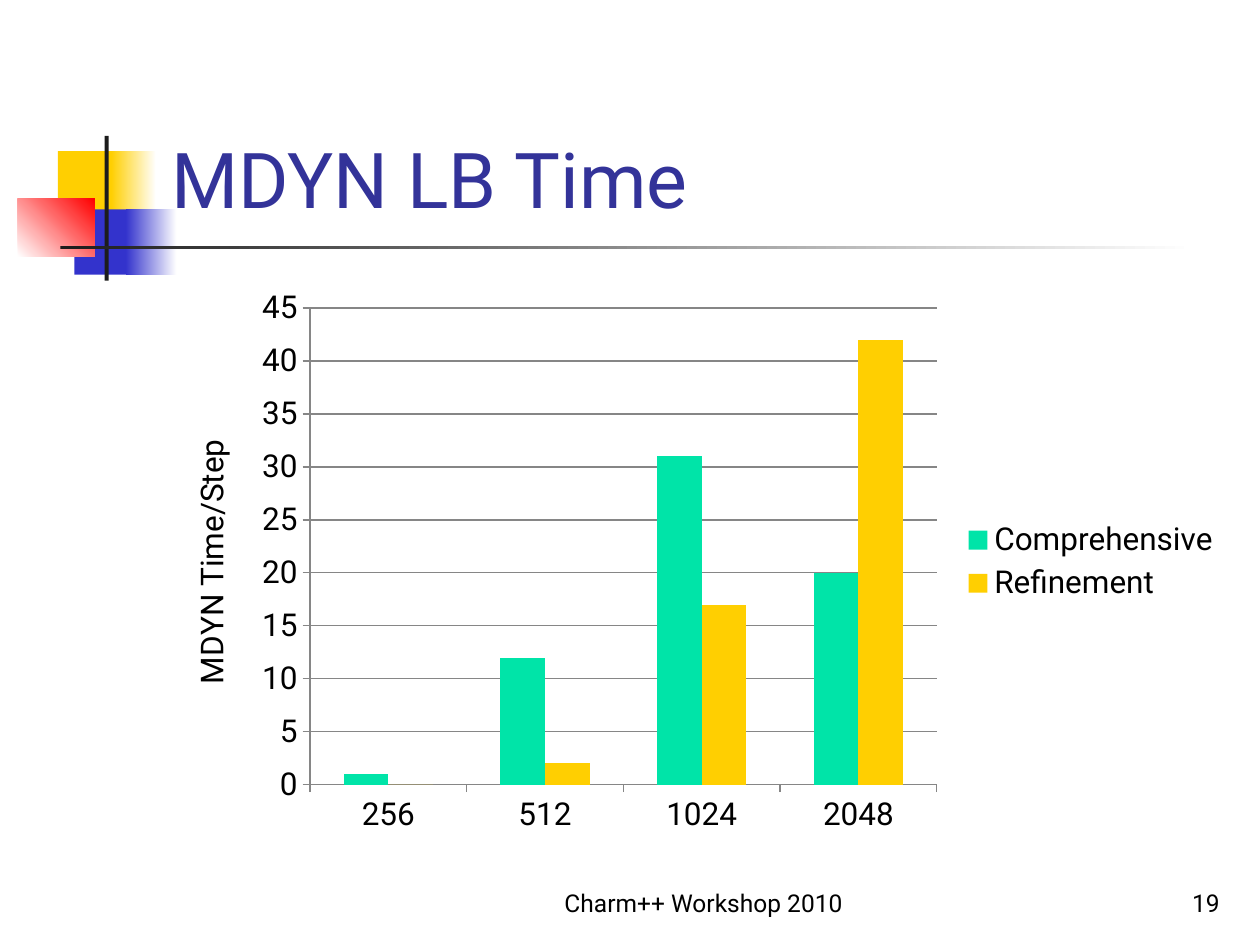
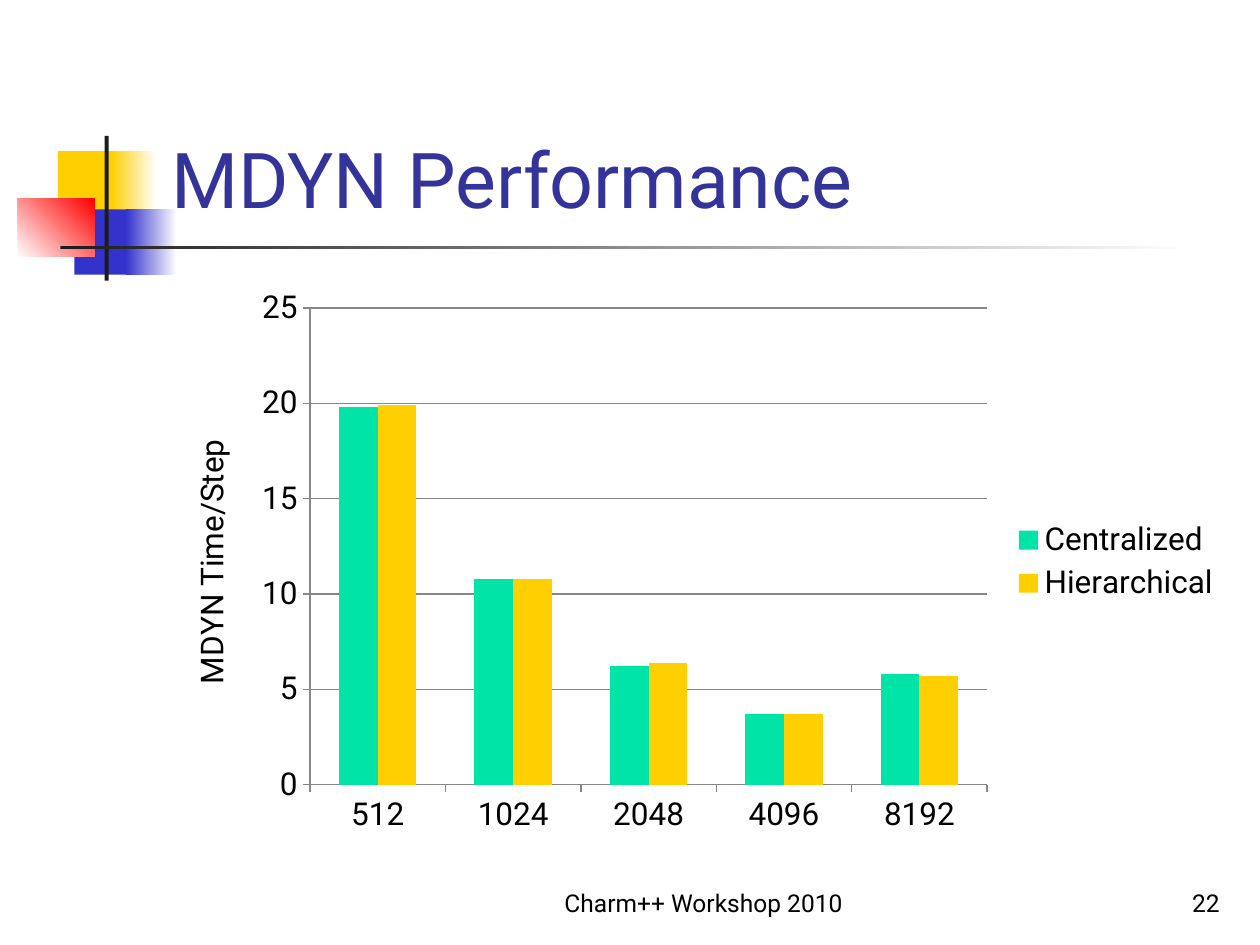
import pptx
import pptx.chart.data
import pptx.dml.color
import pptx.enum.chart
import pptx.enum.shapes
import pptx.enum.text
import pptx.util

Cm, Pt = pptx.util.Cm, pptx.util.Pt
Align = pptx.enum.text.PP_ALIGN
FONT = "Roboto"
BLACK, WHITE, GRAY = "000000", "FFFFFF", "868686"
YELLOW, BLUE, RED, DARK = "FFCF01", "3333CC", "FF0000", "1C1C1C"
TITLE_COLOR = "333399"
SERIES_COLORS = ["00E4A8", YELLOW]

# left, top, width, height in cm, then colours (two make a gradient) and angle
ORNAMENTS = [
    (1.17, 3.05, 1.22, 1.32, [YELLOW], 0),
    (2.24, 3.05, 0.91, 1.32, [YELLOW, WHITE], 0),
    (1.5, 4.22, 1.17, 1.32, [BLUE], 0),
    (2.54, 4.22, 1.02, 1.32, [BLUE, WHITE], 0),
    (0.36, 4.01, 1.55, 1.17, [WHITE, RED], 45),
    (2.11, 2.74, 0.08, 2.92, [DARK], 0),
    (1.22, 4.95, 22.86, 0.08, [DARK, WHITE], 0),
]

SLIDES = [
    ("MDYN LB Time", "19", ["256", "512", "1024", "2048"],
     {"Comprehensive": [1, 12, 31, 20], "Refinement": [0, 2, 17, 42]}),
    ("MDYN Performance", "22", ["512", "1024", "2048", "4096", "8192"],
     {"Centralized": [19.8, 10.8, 6.2, 3.7, 5.8],
      "Hierarchical": [19.9, 10.8, 6.4, 3.7, 5.7]}),
]


def color(hex_string):
    return pptx.dml.color.RGBColor.from_string(hex_string)


def add_text(page, text, left, top, width, height, size=14, fill=BLACK, align=Align.LEFT):
    """Add a bottom-anchored text box; lengths are in cm."""
    box = page.shapes.add_textbox(Cm(left), Cm(top), Cm(width), Cm(height))
    box.text_frame.word_wrap = True
    box.text_frame.vertical_anchor = pptx.enum.text.MSO_ANCHOR.BOTTOM
    para = box.text_frame.paragraphs[0]
    para.alignment = align
    span = para.add_run()
    span.text = text
    span.font.name, span.font.size = FONT, Pt(size)
    span.font.color.rgb = color(fill)


deck = pptx.Presentation()
deck.slide_width, deck.slide_height = Cm(25.4), Cm(19.05)

for title, number, categories, series_values in SLIDES:
    page = deck.slides.add_slide(deck.slide_layouts[6])

    for left, top, width, height, colors, angle in ORNAMENTS:
        block = page.shapes.add_shape(pptx.enum.shapes.MSO_SHAPE.RECTANGLE,
                                      Cm(left), Cm(top), Cm(width), Cm(height))
        block.shadow.inherit = False
        block.line.fill.background()
        if len(colors) == 1:
            block.fill.solid()
            block.fill.fore_color.rgb = color(colors[0])
        else:
            block.fill.gradient()
            block.fill.gradient_angle = angle
            for stop, stop_color in zip(block.fill.gradient_stops, colors):
                stop.color.rgb = color(stop_color)

    add_text(page, title, 3.2, 0.58, 21.64, 4.06, size=44, fill=TITLE_COLOR)
    add_text(page, "Charm++ Workshop 2010", 10.16, 17.35, 8.05, 1.27, align=Align.CENTER)
    add_text(page, number, 19.56, 17.35, 5.28, 1.27, align=Align.RIGHT)

    data = pptx.chart.data.CategoryChartData()
    data.categories = categories
    for name, values in series_values.items():
        data.add_series(name, values)
    chart = page.shapes.add_chart(pptx.enum.chart.XL_CHART_TYPE.COLUMN_CLUSTERED,
                                  Cm(3.28), Cm(5.61), Cm(21.59), Cm(11.43), data).chart
    chart.font.name, chart.font.size = FONT, Pt(18)
    chart.font.color.rgb = color(BLACK)
    chart.has_title = False
    chart.has_legend = True
    chart.legend.position = pptx.enum.chart.XL_LEGEND_POSITION.RIGHT
    chart.legend.include_in_layout = False

    plot = chart.plots[0]
    plot.gap_width, plot.overlap = 150, 0
    plot.vary_by_categories = False
    for series, series_color in zip(plot.series, SERIES_COLORS):
        series.format.fill.solid()
        series.format.fill.fore_color.rgb = color(series_color)

    value_axis = chart.value_axis
    value_axis.has_major_gridlines = True
    value_axis.minimum_scale = 0
    value_axis.major_unit = 5
    value_axis.tick_labels.number_format = "General"
    value_axis.tick_labels.number_format_is_linked = False
    for axis in (chart.category_axis, value_axis):
        axis.major_tick_mark = pptx.enum.chart.XL_TICK_MARK.OUTSIDE
    for line in (chart.category_axis.format.line, value_axis.format.line,
                 value_axis.major_gridlines.format.line):
        line.color.rgb = color(GRAY)
        line.width = Pt(0.75)

    para = value_axis.axis_title.text_frame.paragraphs[0]
    span = para.add_run()
    span.text = "MDYN Time/Step"
    span.font.name, span.font.size, span.font.bold = FONT, Pt(18), False
    span.font.color.rgb = color(BLACK)

deck.save("out.pptx")
